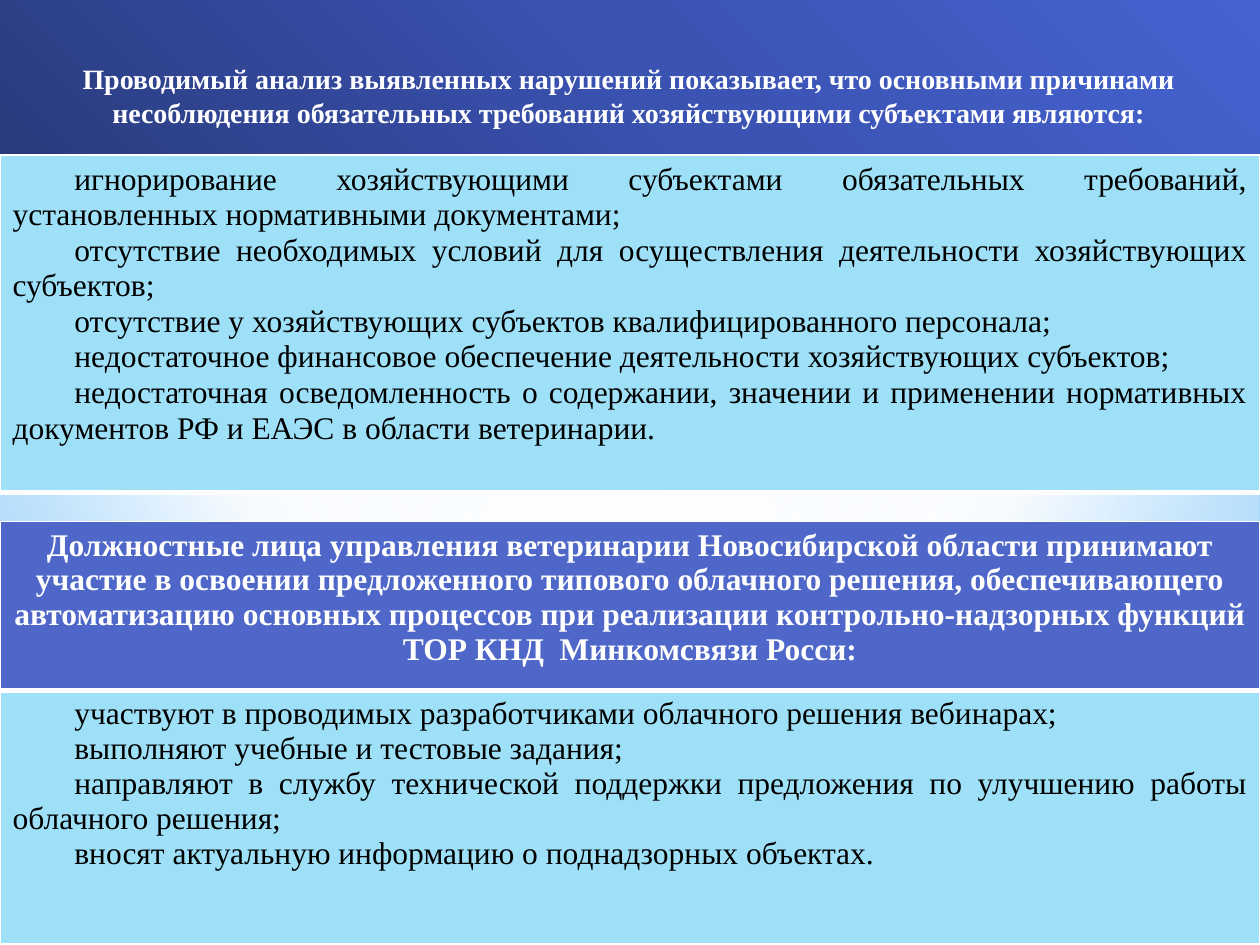
from dataclasses import dataclass

from pptx import Presentation
from pptx.dml.color import RGBColor
from pptx.enum import shapes, text
from pptx.oxml import parse_xml
from pptx.oxml.ns import nsdecls
from pptx.util import Inches, Pt


@dataclass(frozen=True)
class Theme:
    font: str = "Times New Roman"
    title_size: int = 16
    body_size: int = 18
    light_text: str = "FFFFFF"
    dark_text: str = "000000"
    border: str = "FFFFFF"
    heading_fill: str = "4E67C8"
    list_fill: str = "9EE0F8"
    # Gradient stops: position %, colour, opacity %
    page: tuple = ((0, "9ED5FF", 100), (60, "FFFFFF", 100), (100, "5BB9FF", 100))
    haze: tuple = ((0, "FFFFFF", 89), (48, "FFFFFF", 62), (100, "B4DCFA", 79))
    glow: tuple = ((0, "FFFFFF", 100), (56, "FFFFFF", 0))
    banner: tuple = ((0, "293A7C", 100), (50, "3A52B0", 100), (100, "4562D1", 100))


THEME = Theme()
CENTRE = (50, 50, 50, 50)

TITLE = ("Проводимый анализ выявленных нарушений показывает, что основными причинами "
         "несоблюдения обязательных требований хозяйствующими субъектами являются:")
CAUSES = [
    "игнорирование хозяйствующими субъектами обязательных требований, "
    "установленных нормативными документами;",
    "отсутствие необходимых условий для осуществления деятельности хозяйствующих субъектов;",
    "отсутствие у хозяйствующих субъектов квалифицированного персонала;",
    "недостаточное финансовое обеспечение деятельности хозяйствующих субъектов;",
    "недостаточная осведомленность о содержании, значении и применении нормативных "
    "документов РФ и ЕАЭС в области ветеринарии.",
]
PARTICIPATION = [
    "Должностные лица управления ветеринарии Новосибирской области принимают участие "
    "в освоении предложенного типового облачного решения, обеспечивающего автоматизацию "
    "основных процессов при реализации контрольно-надзорных функций "
    "ТОР КНД  Минкомсвязи Росси:",
]
ACTIONS = [
    "участвуют в проводимых разработчиками облачного решения вебинарах;",
    "выполняют учебные и тестовые задания;",
    "направляют в службу технической поддержки предложения по улучшению работы "
    "облачного решения;",
    "вносят актуальную информацию о поднадзорных объектах.",
]


def inches(box):
    return [Inches(value) for value in box]


def set_gradient(fill, owner, stops, focus=None, angle=0):
    """Fill with a circular gradient around focus, or a linear one at angle."""
    fill.solid()
    solid = owner.xpath(".//a:solidFill")[0]
    stop_xml = "".join(
        f'<a:gs pos="{position * 1000}"><a:srgbClr val="{colour}">'
        f'<a:alpha val="{opacity * 1000}"/></a:srgbClr></a:gs>'
        for position, colour, opacity in stops)
    if focus:
        sides = " ".join(f'{side}="{value * 1000}"' for side, value in zip("ltrb", focus))
        direction = f'<a:path path="circle"><a:fillToRect {sides}/></a:path>'
    else:
        direction = f'<a:lin ang="{angle * 60000}" scaled="0"/>'
    gradient = parse_xml(f'<a:gradFill {nsdecls("a")} rotWithShape="1">'
                         f'<a:gsLst>{stop_xml}</a:gsLst>{direction}</a:gradFill>')
    solid.getparent().replace(solid, gradient)


def add_gradient_shape(slide, kind, box, stops, **direction):
    shape = slide.shapes.add_shape(kind, *inches(box))
    shape.shadow.inherit = False
    set_gradient(shape.fill, shape.element.spPr, stops, **direction)
    shape.line.fill.background()


def add_backdrop(slide):
    set_gradient(slide.background.fill, slide.element, THEME.page, focus=(20, 10, 20, 60))
    kinds = shapes.MSO_SHAPE
    add_gradient_shape(slide, kinds.RECTANGLE, (0, 0, 10, 5.58), THEME.haze, focus=CENTRE)
    add_gradient_shape(slide, kinds.OVAL, (0, 1.75, 10, 5.58), THEME.glow, focus=CENTRE)


def format_paragraph(paragraph, size, colour, bold, alignment):
    paragraph.alignment = alignment
    paragraph.font.name = THEME.font
    paragraph.font.size = Pt(size)
    paragraph.font.bold = bold
    paragraph.font.color.rgb = RGBColor.from_string(colour)


def add_title_banner(slide, banner_box, title_box):
    add_gradient_shape(slide, shapes.MSO_SHAPE.RECTANGLE, banner_box, THEME.banner, angle=315)
    title = slide.shapes.title
    title.left, title.top, title.width, title.height = inches(title_box)
    slide.shapes.element.append(title.element)  # bring in front of the banner
    frame = title.text_frame
    frame.text = TITLE
    frame.word_wrap = True
    frame.auto_size = text.MSO_AUTO_SIZE.NONE
    frame.vertical_anchor = text.MSO_ANCHOR.TOP
    format_paragraph(frame.paragraphs[0], THEME.title_size, THEME.light_text, True,
                     text.PP_ALIGN.CENTER)


def set_borders(cell):
    properties = cell._tc.get_or_add_tcPr()
    for index, (side, width) in enumerate((("L", 1), ("R", 1), ("T", 1), ("B", 3))):
        properties.insert(index, parse_xml(
            f'<a:ln{side} {nsdecls("a")} w="{Pt(width)}"><a:solidFill>'
            f'<a:srgbClr val="{THEME.border}"/></a:solidFill></a:ln{side}>'))


def add_panel(slide, box, lines, heading=False, line_spacing=None):
    """Add a one-cell table holding either a heading or an indented list."""
    table = slide.shapes.add_table(1, 1, *inches(box)).table
    table.first_row = table.horz_banding = False
    cell = table.cell(0, 0)
    cell.fill.solid()
    cell.fill.fore_color.rgb = RGBColor.from_string(
        THEME.heading_fill if heading else THEME.list_fill)
    set_borders(cell)
    cell.text = "\n".join(lines)
    for paragraph in cell.text_frame.paragraphs:
        if heading:
            format_paragraph(paragraph, THEME.body_size, THEME.light_text, True,
                             text.PP_ALIGN.CENTER)
        else:
            format_paragraph(paragraph, THEME.body_size, THEME.dark_text, False,
                             text.PP_ALIGN.JUSTIFY)
            paragraph._p.get_or_add_pPr().set("indent", str(Inches(0.49)))
        if line_spacing:
            paragraph.line_spacing = line_spacing


def main():
    presentation = Presentation()
    presentation.slide_width, presentation.slide_height = Inches(10), Inches(7.5)
    slide = presentation.slides.add_slide(presentation.slide_layouts[5])
    add_backdrop(slide)
    add_title_banner(slide, (-0.02, 0, 10.02, 1.39), (0.09, 0.44, 9.8, 1.3))
    add_panel(slide, (0, 5.48, 10, 2.02), ACTIONS)
    add_panel(slide, (0, 4.14, 10, 1.34), PARTICIPATION, heading=True)
    add_panel(slide, (0, 1.23, 10, 2.68), CAUSES, line_spacing=1.02)
    presentation.save("out.pptx")


if __name__ == "__main__":
    main()
